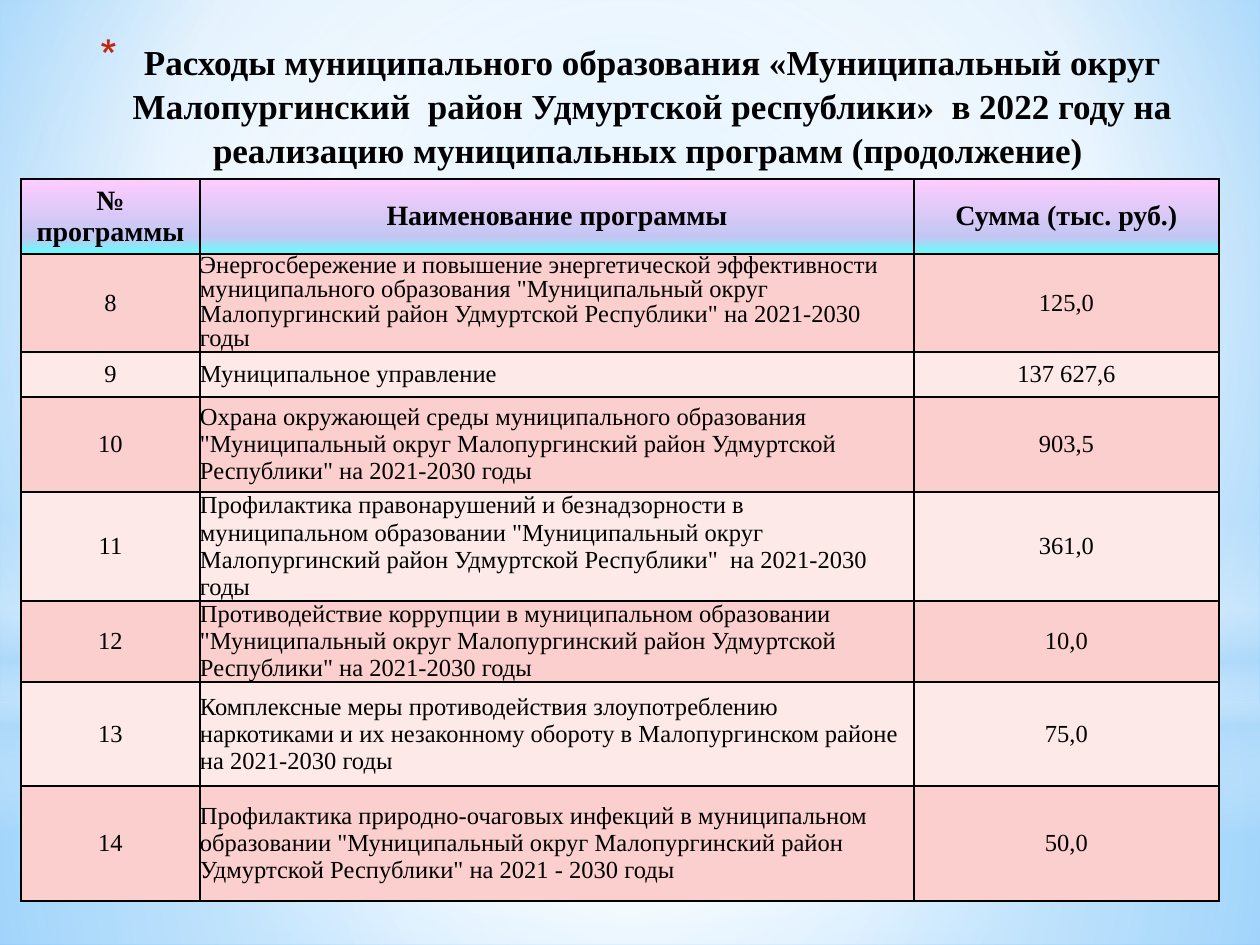
from dataclasses import dataclass

from lxml import etree
from pptx import Presentation
from pptx.dml.color import RGBColor
from pptx.enum.shapes import MSO_SHAPE
from pptx.enum.text import MSO_ANCHOR, MSO_AUTO_SIZE, PP_ALIGN
from pptx.oxml.ns import qn
from pptx.util import Pt

SCALE = 914400 / 126
RECT, OVAL = MSO_SHAPE.RECTANGLE, MSO_SHAPE.OVAL
LEFT, CENTER = PP_ALIGN.LEFT, PP_ALIGN.CENTER
TOP, MIDDLE = MSO_ANCHOR.TOP, MSO_ANCHOR.MIDDLE
NO_FIT = MSO_AUTO_SIZE.NONE


@dataclass(frozen=True)
class Theme:
    font: str = "Times New Roman"
    ink: str = "000000"
    bullet: str = "C3260C"
    bands: tuple = ("FACFCD", "FCE9E8")
    head: tuple = ((0, "FFCCFF"), (78, "C1C7F2"), (100, "66FFFF"))
    sky: tuple = ((0, "9ED5FF"), (60, "FFFFFF"), (100, "5BB9FF"))
    white: str = "FFFFFF"
    haze: str = "B4DCFA"
    title_pt: int = 20
    head_pt: int = 16
    body_pt: int = 14


THEME = Theme()
MID = (50, 50, 50, 50)
WHITE, HAZE = THEME.white, THEME.haze
# shape, box, stops (position, colour, opacity), focus
GLOWS = [
    (RECT, (0, 703, 1260, 242),
     [(0, WHITE, 91), (37, WHITE, 76), (100, HAZE, 79)], MID),
    (RECT, (0, 0, 1260, 703),
     [(0, WHITE, 89), (48, WHITE, 62), (100, HAZE, 79)], MID),
    (RECT, (0, 519, 1260, 315),
     [(0, WHITE, 0), (29, WHITE, 30), (45, HAZE, 40), (55, WHITE, 26),
      (65, HAZE, 60), (100, WHITE, 0)], None),
    (OVAL, (0, 221, 1260, 703), [(0, WHITE, 100), (56, WHITE, 0)], MID),
]
TITLE = ("Расходы муниципального образования «Муниципальный округ "
         "Малопургинский  район Удмуртской республики»  в 2022 году на "
         "реализацию муниципальных программ (продолжение) ")
COLS = [179, 714, 305]
HEIGHTS = [74, 98, 45, 95, 109, 81, 104, 115]
HEADS = ["№ программы", "Наименование программы", "Сумма (тыс. руб.)"]
FIRST = 8
ROWS = [
    ('Энергосбережение и повышение энергетической эффективности '
     'муниципального образования "Муниципальный округ Малопургинский район '
     'Удмуртской Республики" на 2021-2030 годы', "125,0"),
    ("Муниципальное управление", "137 627,6"),
    ('Охрана окружающей среды муниципального образования "Муниципальный '
     'округ Малопургинский район Удмуртской Республики" на 2021-2030 годы',
     "903,5"),
    ('Профилактика правонарушений и безнадзорности в муниципальном '
     'образовании "Муниципальный округ Малопургинский район Удмуртской '
     'Республики"  на 2021-2030 годы', "361,0"),
    ('Противодействие коррупции в муниципальном образовании "Муниципальный '
     'округ Малопургинский район Удмуртской Республики" на 2021-2030 годы',
     "10,0"),
    ("Комплексные меры противодействия злоупотреблению наркотиками и их "
     "незаконному обороту в Малопургинском районе на 2021-2030 годы", "75,0"),
    ('Профилактика природно-очаговых инфекций в муниципальном образовании '
     '"Муниципальный округ Малопургинский район Удмуртской Республики" '
     'на 2021 - 2030 годы', "50,0"),
]


def px(n):
    return round(n * SCALE)


def node(owner, tag, **attrs):
    return etree.SubElement(owner, qn(tag), {k: str(v) for k, v in attrs.items()})


def grade(fill, stops, focus=None):
    """Radial gradient around focus (left, top, right, bottom), else downward."""
    fill.gradient()
    grad = fill._xPr.find(qn("a:gradFill"))
    for child in list(grad):
        grad.remove(child)
    gs_list = node(grad, "a:gsLst")
    for pos, color, *alpha in stops:
        stop = node(gs_list, "a:gs", pos=pos * 1000)
        clr = node(stop, "a:srgbClr", val=color)
        if alpha:
            node(clr, "a:alpha", val=alpha[0] * 1000)
    if focus:
        way = node(grad, "a:path", path="circle")
        node(way, "a:fillToRect", **{k: v * 1000 for k, v in zip("ltrb", focus)})
    else:
        node(grad, "a:lin", ang=5400000, scaled=0)


def add_glow(slide, kind, box, stops, focus):
    shape = slide.shapes.add_shape(kind, *map(px, box))
    shape.shadow.inherit = False
    shape.line.fill.background()
    grade(shape.fill, stops, focus)


def write(para, text, size, bold=False, align=CENTER):
    para.alignment = align
    run = para.add_run()
    run.text = text
    font = run.font
    font.name, font.size, font.bold = THEME.font, Pt(size), bold
    font.color.rgb = RGBColor.from_string(THEME.ink)


def set_title(slide):
    title = slide.shapes.title
    slide.shapes._spTree.append(title._element)  # in front of the glows
    title.left, title.top, title.width, title.height = map(px, (32, 32, 1197, 136))
    frame = title.text_frame
    frame.word_wrap, frame.auto_size = True, NO_FIT
    frame.vertical_anchor = TOP
    para = frame.paragraphs[0]
    write(para, TITLE, THEME.title_pt, True)
    para.line_spacing = 1.05
    para.space_before = Pt(0)
    props = para._p.get_or_add_pPr()
    props.set("marL", str(px(44)))
    props.set("indent", str(px(-44)))
    node(node(props, "a:buClr"), "a:srgbClr", val=THEME.bullet)
    node(props, "a:buSzPct", val=128000)
    node(props, "a:buChar", char="*")


def edge(cell):
    props = cell._tc.get_or_add_tcPr()
    for i, tag in enumerate(("a:lnL", "a:lnR", "a:lnT", "a:lnB")):
        line = node(props, tag, w=Pt(1))
        node(node(line, "a:solidFill"), "a:srgbClr", val=THEME.ink)
        props.insert(i, line)


def fill_cell(cell, text, size, color=None, align=CENTER):
    """A cell without a colour is a heading."""
    cell.vertical_anchor = MIDDLE
    if align == LEFT:
        cell.margin_left = cell.margin_right = 0
        cell.margin_top = cell.margin_bottom = 0
    write(cell.text_frame.paragraphs[0], text, size, color is None, align)
    if color:
        cell.fill.solid()
        cell.fill.fore_color.rgb = RGBColor.from_string(color)
    else:
        grade(cell.fill, THEME.head)
    edge(cell)


def add_grid(slide):
    box = map(px, (21, 179, sum(COLS), sum(HEIGHTS)))
    grid = slide.shapes.add_table(len(HEIGHTS), len(COLS), *box).table
    for col, width in zip(grid.columns, COLS):
        col.width = px(width)
    for row, height in zip(grid.rows, HEIGHTS):
        row.height = px(height)
    for c, text in enumerate(HEADS):
        fill_cell(grid.cell(0, c), text, THEME.head_pt)
    for r, (name, cost) in enumerate(ROWS):
        color = THEME.bands[r % 2]
        for c, text in enumerate((str(FIRST + r), name, cost)):
            align = LEFT if c == 1 else CENTER
            fill_cell(grid.cell(r + 1, c), text, THEME.body_pt, color, align)
    grid.cell(1, 1).text_frame.paragraphs[0].line_spacing = 0.9


def main():
    deck = Presentation()
    deck.slide_width, deck.slide_height = px(1260), px(945)
    slide = deck.slides.add_slide(deck.slide_layouts[5])
    grade(slide.background.fill, THEME.sky, (20, 10, 20, 60))
    for glow in GLOWS:
        add_glow(slide, *glow)
    set_title(slide)
    add_grid(slide)
    deck.save("out.pptx")


if __name__ == "__main__":
    main()
